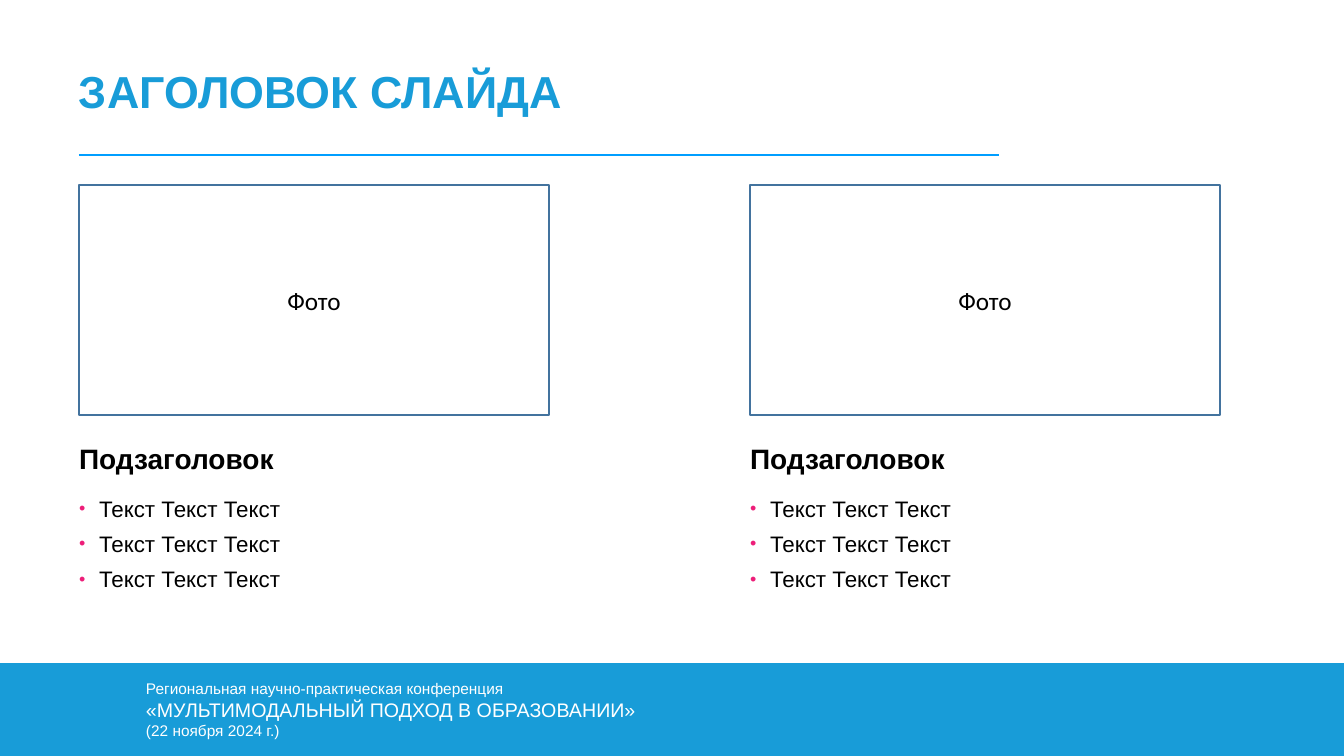
from lxml import etree
from pptx import Presentation
from pptx.dml.color import RGBColor
from pptx.enum.shapes import MSO_CONNECTOR, MSO_SHAPE
from pptx.enum.text import MSO_ANCHOR, PP_ALIGN
from pptx.oxml.ns import qn
from pptx.util import Pt

STRAIGHT = MSO_CONNECTOR.STRAIGHT
RECTANGLE = MSO_SHAPE.RECTANGLE
MIDDLE = MSO_ANCHOR.MIDDLE
CENTER = PP_ALIGN.CENTER

BLUE = RGBColor(0x18, 0x9C, 0xD8)
RULE_BLUE = RGBColor(0x00, 0x9E, 0xFF)
FRAME_BLUE = RGBColor(0x43, 0x73, 0x9E)
WHITE = RGBColor(0xFF, 0xFF, 0xFF)
BLACK = RGBColor(0x00, 0x00, 0x00)
BULLET_PINK = "ED1E79"

SLIDE_W, SLIDE_H = 1344, 756
LEFT = 79
COLUMN_W = 470


def px(length):
    return round(length * 914400 / 100.8)


def add_text(left, top, width, height, lines, color, bold=False, margins=(0, 0, 0, 0)):
    """Add a text box; lines holds (text, size) pairs, one per paragraph."""
    frame = slide.shapes.add_textbox(px(left), px(top), px(width), px(height)).text_frame
    frame.word_wrap = True
    (frame.margin_left, frame.margin_top,
     frame.margin_right, frame.margin_bottom) = [px(m) for m in margins]
    frame.text = "\n".join(text for text, size in lines)
    for paragraph, (text, size) in zip(frame.paragraphs, lines):
        font = paragraph.font
        font.name, font.size, font.bold = "Arial", Pt(size), bold
        font.color.rgb = color
    return frame


prs = Presentation()
prs.slide_width, prs.slide_height = px(SLIDE_W), px(SLIDE_H)
slide = prs.slides.add_slide(prs.slide_layouts[6])

# Rule under the title
title_rule = slide.shapes.add_connector(STRAIGHT, px(LEFT), px(155), px(999), px(155))
title_rule.line.color.rgb = RULE_BLUE
title_rule.line.width = Pt(1.5)
etree.SubElement(title_rule._element.spPr, qn("a:effectLst"))

# Footer band with the conference name
footer = slide.shapes.add_shape(RECTANGLE, 0, px(663), px(SLIDE_W), px(SLIDE_H - 663))
footer.shadow.inherit = False
footer.fill.solid()
footer.fill.fore_color.rgb = BLUE
footer.line.fill.background()
add_text(136, 674, 539, 72, [
    ("Региональная научно-практическая конференция", 11),
    ("«МУЛЬТИМОДАЛЬНЫЙ ПОДХОД В ОБРАЗОВАНИИ»", 14),
    ("(22 ноября 2024 г.)", 11),
], WHITE, margins=(10, 5, 10, 5))

# Title
title = add_text(LEFT, 65, 1173, 122, [("ЗАГОЛОВОК СЛАЙДА", 32)], BLUE, True, (0, 5, 10, 5))
title.paragraphs[0].line_spacing = 0.9

# Two columns: photo frame, subheading, bullet list
for column_left in (LEFT, 750):
    photo = slide.shapes.add_shape(RECTANGLE, px(column_left), px(185), px(COLUMN_W), px(230))
    photo.shadow.inherit = False
    photo.fill.solid()
    photo.fill.fore_color.rgb = WHITE
    photo.line.color.rgb = FRAME_BLUE
    photo.line.width = Pt(1)
    photo.text_frame.text = "Фото"
    photo.text_frame.vertical_anchor = MIDDLE
    caption = photo.text_frame.paragraphs[0]
    caption.alignment = CENTER
    caption.font.name, caption.font.size = "Calibri", Pt(18)
    caption.font.color.rgb = BLACK

    add_text(column_left, 441, COLUMN_W, 34, [("Подзаголовок", 20)], BLACK, True)

    points = add_text(column_left, 495, COLUMN_W, 99, [("Текст Текст Текст", 16)] * 3, BLACK)
    for point in points.paragraphs:
        point.space_after = Pt(6)
        properties = point._p.get_or_add_pPr()
        properties.set("marL", str(px(20)))
        properties.set("indent", str(px(-20)))
        bullet_color = etree.Element(qn("a:buClr"))
        etree.SubElement(bullet_color, qn("a:srgbClr"), val=BULLET_PINK)
        bullet_size = etree.Element(qn("a:buSzPct"), val="80000")
        bullet_font = etree.Element(qn("a:buFont"), typeface="Arial")
        bullet_char = etree.Element(qn("a:buChar"), char="•")
        text_defaults = properties.find(qn("a:defRPr"))
        for bullet_part in (bullet_color, bullet_size, bullet_font, bullet_char):
            text_defaults.addprevious(bullet_part)

prs.save("out.pptx")
